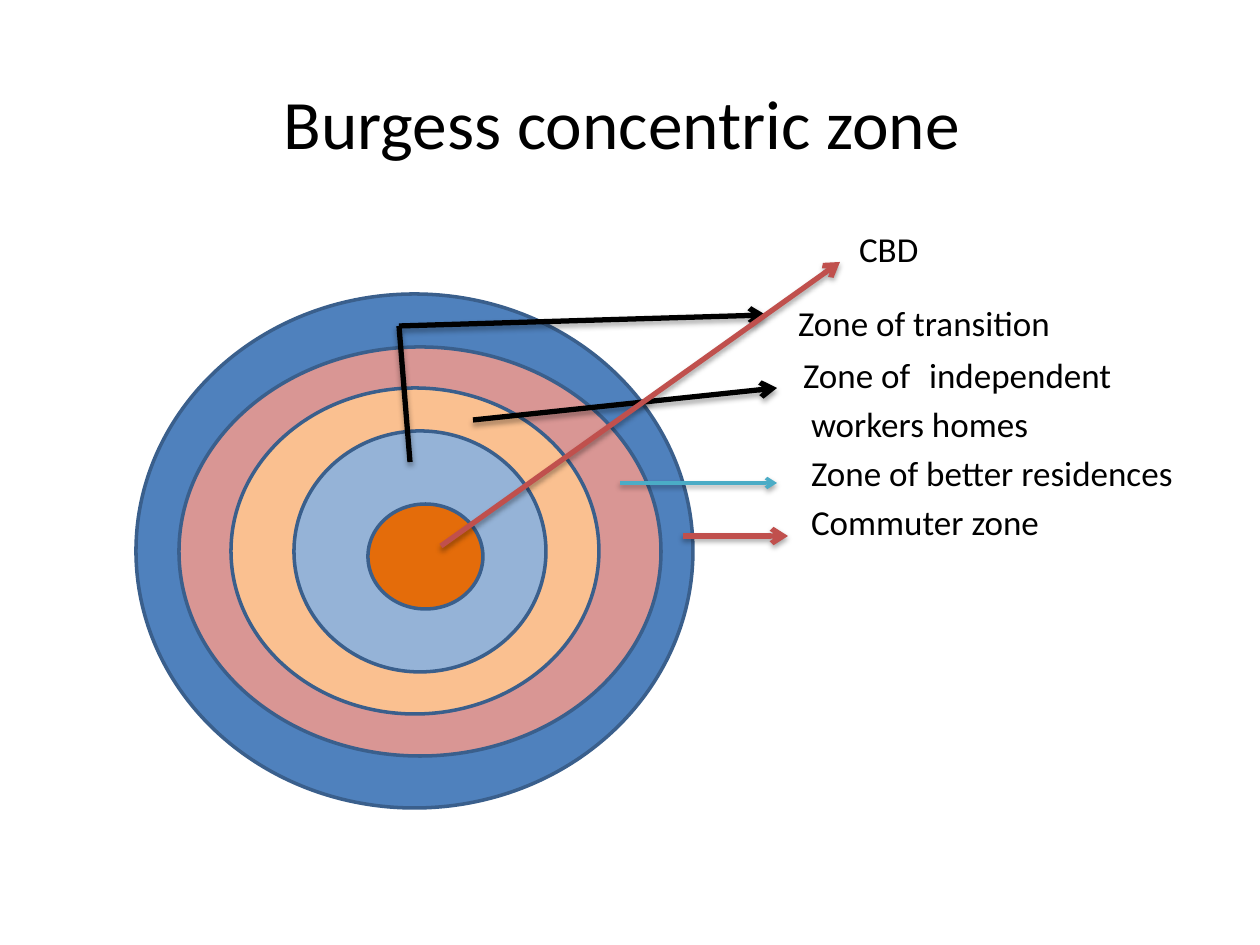
from lxml import etree
from pptx import Presentation
from pptx import util as u
from pptx.dml.color import RGBColor
from pptx.enum import shapes, text
from pptx.oxml import ns

BLACK = RGBColor(0x00, 0x00, 0x00)
RED = RGBColor(0xC0, 0x50, 0x4D)
TEAL = RGBColor(0x4B, 0xAC, 0xC6)
OUTLINE = RGBColor(0x3A, 0x5F, 0x8C)
BLUE = RGBColor(0x4F, 0x81, 0xBD)
PINK = RGBColor(0xD9, 0x96, 0x94)
PEACH = RGBColor(0xFA, 0xC0, 0x90)
PALE_BLUE = RGBColor(0x95, 0xB3, 0xD7)
ORANGE = RGBColor(0xE4, 0x6C, 0x0A)

ZONES = [
    (136, 294, 557, 514, BLUE),
    (179, 347, 482, 409, PINK),
    (231, 388, 368, 326, PEACH),
    (294, 431, 252, 241, PALE_BLUE),
    (368, 504, 115, 105, ORANGE),
]
POINTERS = [
    (683, 536, 788, 536, RED, 3, True),
    (620, 483, 777, 483, TEAL, 2, True),
    (473, 420, 777, 388, BLACK, 3, True),
    (410, 462, 399, 326, BLACK, 3, False),
    (399, 326, 766, 315, BLACK, 3, True),
    (441, 546, 840, 262, RED, 3, True),
]
LABELS = [
    ("CBD", 61, 0),
    ("Zone of transition", 0, 18.5),
    ("Zone of\tindependent", 5, 6),
    ("workers homes", 13, 4),
    ("Zone of better residences", 13, 4),
    ("Commuter zone", 13, 4),
]
LABEL_TAB = 144


def px(n):
    """Turn pixels into EMU."""
    return u.Emu(round(n * 914400 / 126))


def sub(parent, tag, **attrs):
    """Append a DrawingML child element."""
    return etree.SubElement(parent, ns.qn(tag), {k: str(v) for k, v in attrs.items()})


def add_text(s, x, y, w, h, lines, size, anchor, align):
    """Add a text box without insets and return its paragraphs."""
    tf = s.shapes.add_textbox(px(x), px(y), px(w), px(h)).text_frame
    tf.word_wrap = True
    tf.vertical_anchor = anchor
    tf.margin_left = tf.margin_right = tf.margin_top = tf.margin_bottom = 0
    tf.text = "\n".join(lines)
    for p in tf.paragraphs:
        p.alignment = align
        for r in p.runs:
            r.font.name = "Calibri"
            r.font.size = u.Pt(size)
            r.font.color.rgb = BLACK
    return tf.paragraphs


def add_zone(s, x, y, w, h, color):
    """Add one ring of the city as an outlined ellipse."""
    sp = s.shapes.add_shape(shapes.MSO_SHAPE.OVAL, px(x), px(y), px(w), px(h))
    sp.shadow.inherit = False
    sp.fill.solid()
    sp.fill.fore_color.rgb = color
    sp.line.color.rgb = OUTLINE
    sp.line.width = u.Pt(2)


def add_pointer(s, x1, y1, x2, y2, color, width, arrow):
    """Add a shadowed line, with an arrowhead at its end if wanted."""
    c = s.shapes.add_connector(shapes.MSO_CONNECTOR.STRAIGHT, px(x1), px(y1), px(x2), px(y2))
    c.line.color.rgb = color
    c.line.width = u.Pt(width)
    if arrow:
        sub(c.line._get_or_add_ln(), "a:tailEnd", type="arrow")
    effects = sub(c._element.spPr, "a:effectLst")
    shadow = sub(effects, "a:outerShdw", blurRad=u.Pt(3.1), dist=u.Pt(1.8),
                 dir=5400000, rotWithShape=0)
    sub(sub(shadow, "a:srgbClr", val=BLACK), "a:alpha", val=35000)


def add_labels(s):
    """Add the zone names, each with its own indent and spacing."""
    names = [name for name, _, _ in LABELS]
    paragraphs = add_text(s, 798, 227, 420, 324, names, 20,
                          text.MSO_ANCHOR.TOP, text.PP_ALIGN.LEFT)
    for p, (name, indent, space) in zip(paragraphs, LABELS):
        p.space_before = u.Pt(space)
        pPr = p._p.get_or_add_pPr()
        pPr.set("marL", str(px(indent)))
        pPr.set("indent", "0")
        if "\t" in name:
            sub(sub(pPr, "a:tabLst"), "a:tab", pos=px(LABEL_TAB), algn="l")


def main():
    """Build the slide and save it."""
    prs = Presentation()
    prs.slide_width, prs.slide_height = px(1260), px(945)
    s = prs.slides.add_slide(prs.slide_layouts[6])
    add_text(s, 55, 43, 1134, 158, ["Burgess concentric zone"], 39.6,
             text.MSO_ANCHOR.MIDDLE, text.PP_ALIGN.CENTER)
    add_labels(s)
    for zone in ZONES:
        add_zone(s, *zone)
    for pointer in POINTERS:
        add_pointer(s, *pointer)
    prs.save("out.pptx")


if __name__ == "__main__":
    main()
